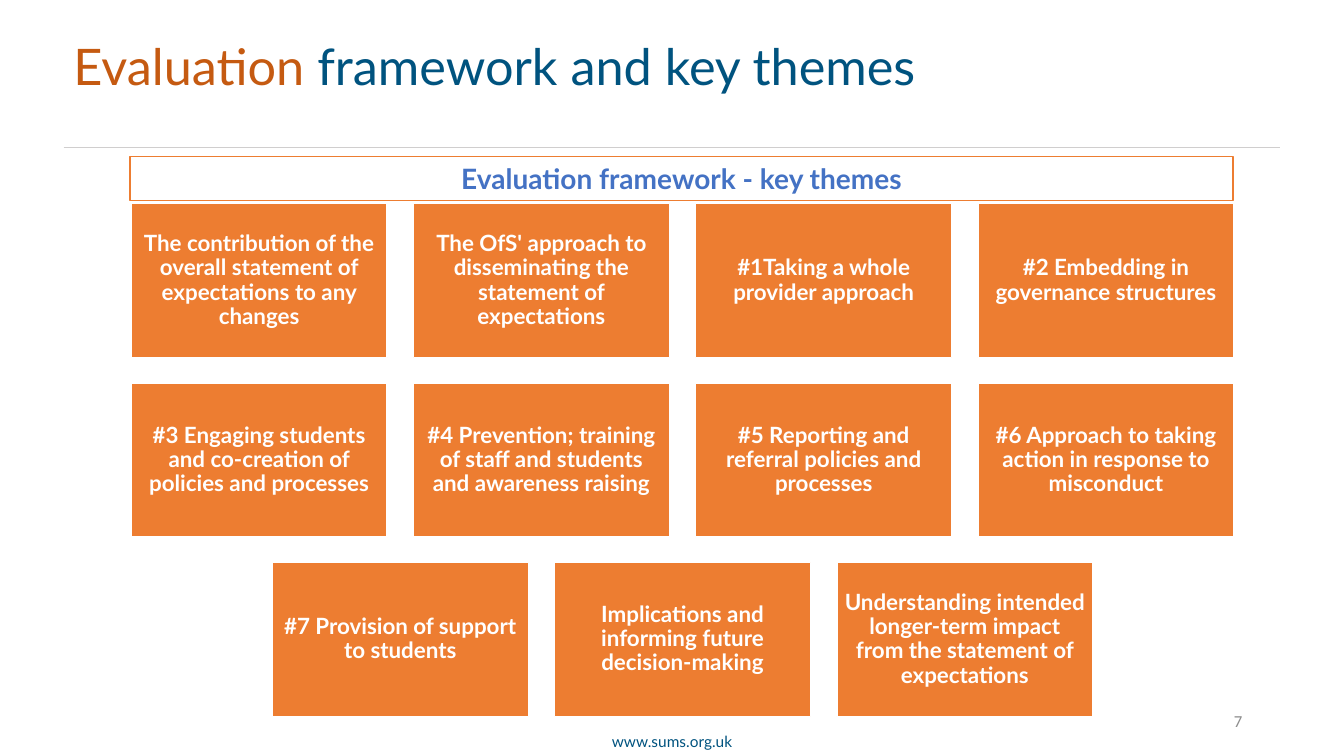
from dataclasses import dataclass

from lxml import etree
from pptx import Presentation
from pptx.dml.color import RGBColor
from pptx.enum.shapes import MSO_CONNECTOR, MSO_SHAPE
from pptx.enum.text import MSO_ANCHOR, PP_ALIGN
from pptx.oxml.ns import qn
from pptx.shapes.autoshape import Shape
from pptx.slide import Slide
from pptx.util import Inches, Pt

RECT = MSO_SHAPE.RECTANGLE
STRAIGHT = MSO_CONNECTOR.STRAIGHT
TOP, MIDDLE = MSO_ANCHOR.TOP, MSO_ANCHOR.MIDDLE
LEFT, CENTER, RIGHT = PP_ALIGN.LEFT, PP_ALIGN.CENTER, PP_ALIGN.RIGHT

WHITE = RGBColor(0xFF, 0xFF, 0xFF)
ORANGE = RGBColor(0xED, 0x7D, 0x31)
RUST = RGBColor(0xC5, 0x5A, 0x11)
NAVY = RGBColor(0x00, 0x53, 0x7F)
BLUE = RGBColor(0x44, 0x72, 0xC4)
GREY = RGBColor(0x8C, 0x8C, 0x8C)
SILVER = RGBColor(0xD0, 0xCE, 0xCE)

# Grid of theme tiles
WIDE, TALL = 2.54, 1.53
STEP_X, STEP_Y = 2.8, 1.78
GRID_TOP = 2.02


@dataclass(frozen=True)
class Box:
    left: float
    top: float
    width: float
    height: float


@dataclass(frozen=True)
class Span:
    text: str
    size: float
    color: RGBColor
    bold: bool = False
    font: str = "Lato"


@dataclass(frozen=True)
class Row:
    left: float
    themes: tuple[str, ...]


ROWS = (
    Row(1.3, (
        "The contribution of the overall statement of expectations to any changes",
        "The OfS' approach to disseminating the statement of expectations",
        "#1Taking a whole provider approach",
        "#2 Embedding in governance structures",
    )),
    Row(1.3, (
        "#3 Engaging students and co-creation of policies and processes",
        "#4 Prevention; training of staff and students and awareness raising",
        "#5 Reporting and referral policies and processes",
        "#6 Approach to taking action in response to misconduct",
    )),
    Row(2.7, (
        "#7 Provision of support to students",
        "Implications and informing future decision-making",
        "Understanding intended longer-term impact from the statement of expectations",
    )),
)


def write(shape: Shape, spans: list[Span], align: PP_ALIGN,
          anchor: MSO_ANCHOR = TOP, spacing: float = 1.0) -> None:
    frame = shape.text_frame
    frame.word_wrap = True
    frame.vertical_anchor = anchor
    para = frame.paragraphs[0]
    para.alignment = align
    para.line_spacing = spacing
    for span in spans:
        run = para.add_run()
        run.text = span.text
        run.font.name = span.font
        run.font.size = Pt(span.size)
        run.font.bold = span.bold
        run.font.color.rgb = span.color


def add_text(slide: Slide, box: Box) -> Shape:
    return slide.shapes.add_textbox(Inches(box.left), Inches(box.top),
                                    Inches(box.width), Inches(box.height))


def add_rect(slide: Slide, box: Box, fill: RGBColor, line: RGBColor) -> Shape:
    rect = slide.shapes.add_shape(RECT, Inches(box.left), Inches(box.top),
                                  Inches(box.width), Inches(box.height))
    rect.shadow.inherit = False
    rect.fill.solid()
    rect.fill.fore_color.rgb = fill
    rect.line.color.rgb = line
    rect.line.width = Pt(1)
    return rect


def add_tile(slide: Slide, box: Box, theme: str) -> None:
    tile = add_rect(slide, box, ORANGE, WHITE)
    frame = tile.text_frame
    frame.margin_left = frame.margin_right = Inches(0.07)
    frame.margin_top = frame.margin_bottom = Inches(0.07)
    write(tile, [Span(theme, 16, WHITE, True)], CENTER, MIDDLE, 0.9)


def add_rule(slide: Slide, left: float, right: float, top: float) -> None:
    rule = slide.shapes.add_connector(STRAIGHT, Inches(left), Inches(top),
                                      Inches(right), Inches(top))
    rule.line.color.rgb = SILVER
    rule.line.width = Pt(0.5)
    etree.SubElement(rule._element.spPr, qn("a:effectLst"))


def main() -> None:
    deck = Presentation()
    deck.slide_width = Inches(13.33)
    deck.slide_height = Inches(7.5)
    slide = deck.slides.add_slide(deck.slide_layouts[6])

    # Rule, footer and page number
    add_rule(slide, 0.63, 12.7, 1.46)
    write(add_text(slide, Box(5.94, 7.21, 1.45, 0.29)),
          [Span("www.sums.org.uk", 11, NAVY)], CENTER)
    write(add_text(slide, Box(9.42, 6.95, 3, 0.4)),
          [Span("7", 12, GREY, font="Calibri")], RIGHT, MIDDLE)

    # Title
    write(add_text(slide, Box(0.63, 0.37, 10.22, 0.81)),
          [Span("Evaluation", 36, RUST),
           Span(" framework and key themes", 36, NAVY)], LEFT, spacing=0.9)

    # Theme tiles
    for i, row in enumerate(ROWS):
        for j, theme in enumerate(row.themes):
            add_tile(slide, Box(row.left + j * STEP_X, GRID_TOP + i * STEP_Y,
                                WIDE, TALL), theme)

    # Heading above the tiles
    head = add_rect(slide, Box(1.29, 1.55, 10.94, 0.44), WHITE, ORANGE)
    write(head, [Span("Evaluation framework - key themes", 20, BLUE, True)], CENTER)

    deck.save("out.pptx")


if __name__ == "__main__":
    main()
